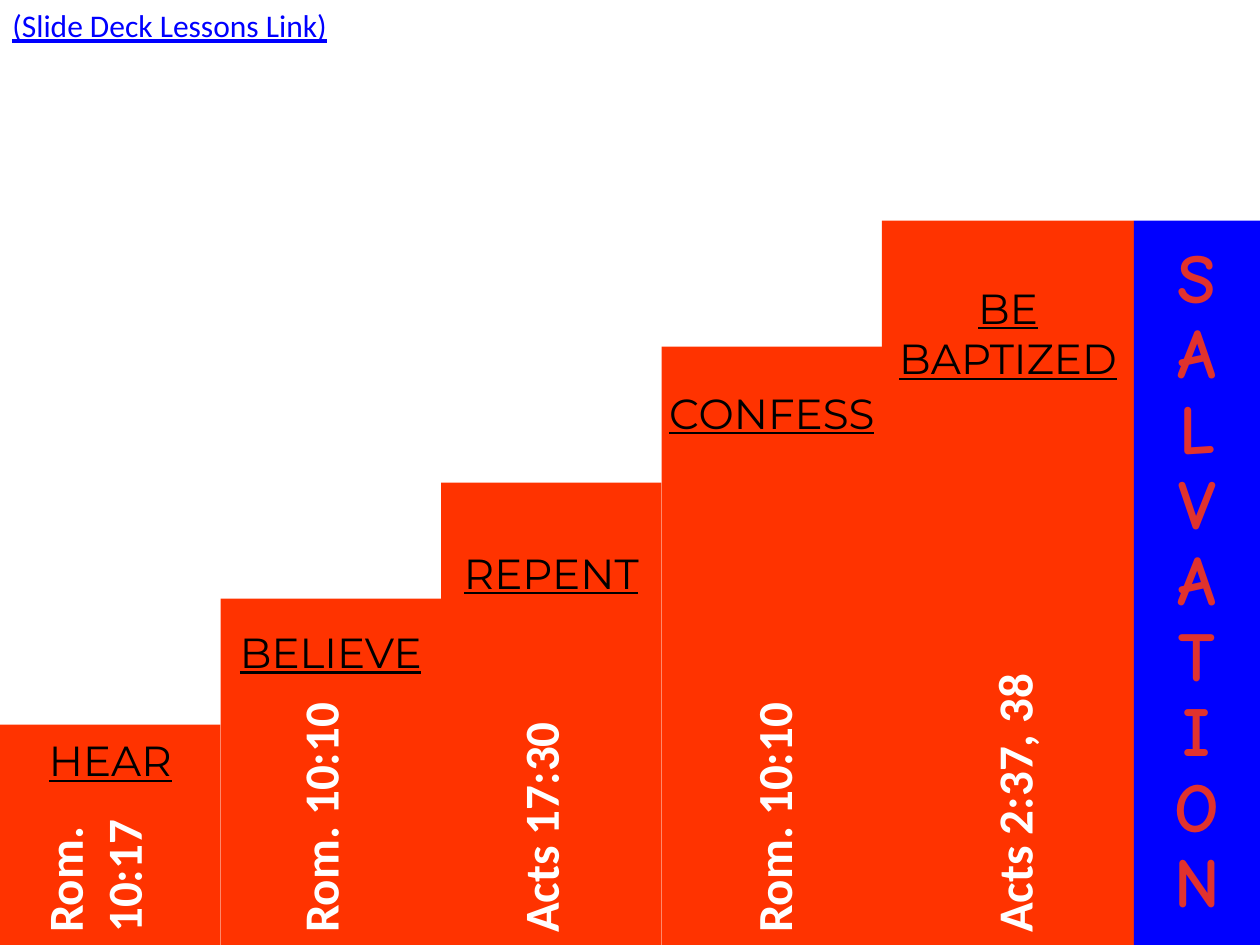
from pptx import Presentation
from pptx.dml.color import RGBColor
from pptx.enum.shapes import MSO_SHAPE
from pptx.enum.text import MSO_ANCHOR, PP_ALIGN
from pptx.util import Cm, Pt

RECT = MSO_SHAPE.RECTANGLE
TOP, MIDDLE = MSO_ANCHOR.TOP, MSO_ANCHOR.MIDDLE
LEFT, CENTER = PP_ALIGN.LEFT, PP_ALIGN.CENTER

COLORS = {"step": "FF3300", "goal": "0000FF", "link": "0000FF",
          "label": "000000", "verse": "FFFFFF", "letters": "E0322D"}

SLIDE_W, SLIDE_H = 25.4, 19.05
LINK = "(Slide Deck Lessons Link)"
GOAL = "SALVATION"
GOAL_W = 2.54

# label lines, step width, step height, label offset from the top of the step
STEPS = [
    (["HEAR"], 4.445, 4.445, 0.21),
    (["BELIEVE"], 4.445, 6.985, 0.56),
    (["REPENT"], 4.445, 9.32, 1.3),
    (["CONFESS"], 4.445, 12.065, 0.82),
    (["BE", "BAPTIZED"], 5.08, 14.605, 1.24),
]
# verse, centre x, length along the step, thickness
VERSES = [
    ("Rom. 10:17", 1.87, 3.18, 2.62),
    ("Rom. 10:10", 6.44, 5.92, 1.45),
    ("Acts 17:30", 10.88, 6.99, 1.45),
    ("Rom. 10:10", 15.58, 6.99, 1.45),
    ("Acts 2:37, 38", 20.43, 6.99, 1.45),
]

FONTS = {
    "label": {"name": "Montserrat", "size": Pt(24), "underline": True},
    "verse": {"name": "Calibri", "size": Pt(28), "bold": True},
    "letters": {"name": "Comic Neue", "size": Pt(40), "bold": True},
    "link": {"name": "Calibri", "size": Pt(18), "underline": True},
}


def write(tf, lines, style, align=LEFT):
    """Write one paragraph per line; a vertical tab breaks a line inside it."""
    for i, line in enumerate(lines):
        p = tf.paragraphs[0] if i == 0 else tf.add_paragraph()
        p.text = line
        p.alignment = align
        for r in p.runs:
            for name, value in FONTS[style].items():
                setattr(r.font, name, value)
            r.font.color.rgb = RGBColor.from_string(COLORS[style])


def add_block(s, left, width, height, color, anchor):
    """Add a plain rectangle standing on the bottom edge of the slide."""
    sp = s.shapes.add_shape(RECT, Cm(left), Cm(SLIDE_H - height),
                            Cm(width), Cm(height))
    sp.shadow.inherit = False
    sp.fill.solid()
    sp.fill.fore_color.rgb = RGBColor.from_string(COLORS[color])
    sp.line.fill.background()
    tf = sp.text_frame
    tf.word_wrap = False
    tf.vertical_anchor = anchor
    return tf


def add_text(s, text, style, left, top, width, height, rotation=0):
    sp = s.shapes.add_textbox(Cm(left), Cm(top), Cm(width), Cm(height))
    sp.rotation = rotation
    sp.text_frame.word_wrap = True
    write(sp.text_frame, [text], style)


def main():
    prs = Presentation()
    prs.slide_width, prs.slide_height = Cm(SLIDE_W), Cm(SLIDE_H)
    s = prs.slides.add_slide(prs.slide_layouts[6])

    left = 0
    for lines, width, height, offset in STEPS:
        tf = add_block(s, left, width, height, "step", TOP)
        tf.margin_top = Cm(offset)
        write(tf, lines, "label", CENTER)
        left += width

    tf = add_block(s, left, GOAL_W, STEPS[-1][2], "goal", MIDDLE)
    write(tf, ["\v".join(GOAL)], "letters", CENTER)
    tf.paragraphs[0].line_spacing = 0.9

    for verse, x, length, thickness in VERSES:
        y = SLIDE_H - length / 2
        add_text(s, verse, "verse", x - length / 2, y - thickness / 2,
                 length, thickness, rotation=270)

    add_text(s, LINK, "link", 0, 0, 16.3, 1.02)
    prs.save("out.pptx")


if __name__ == "__main__":
    main()
